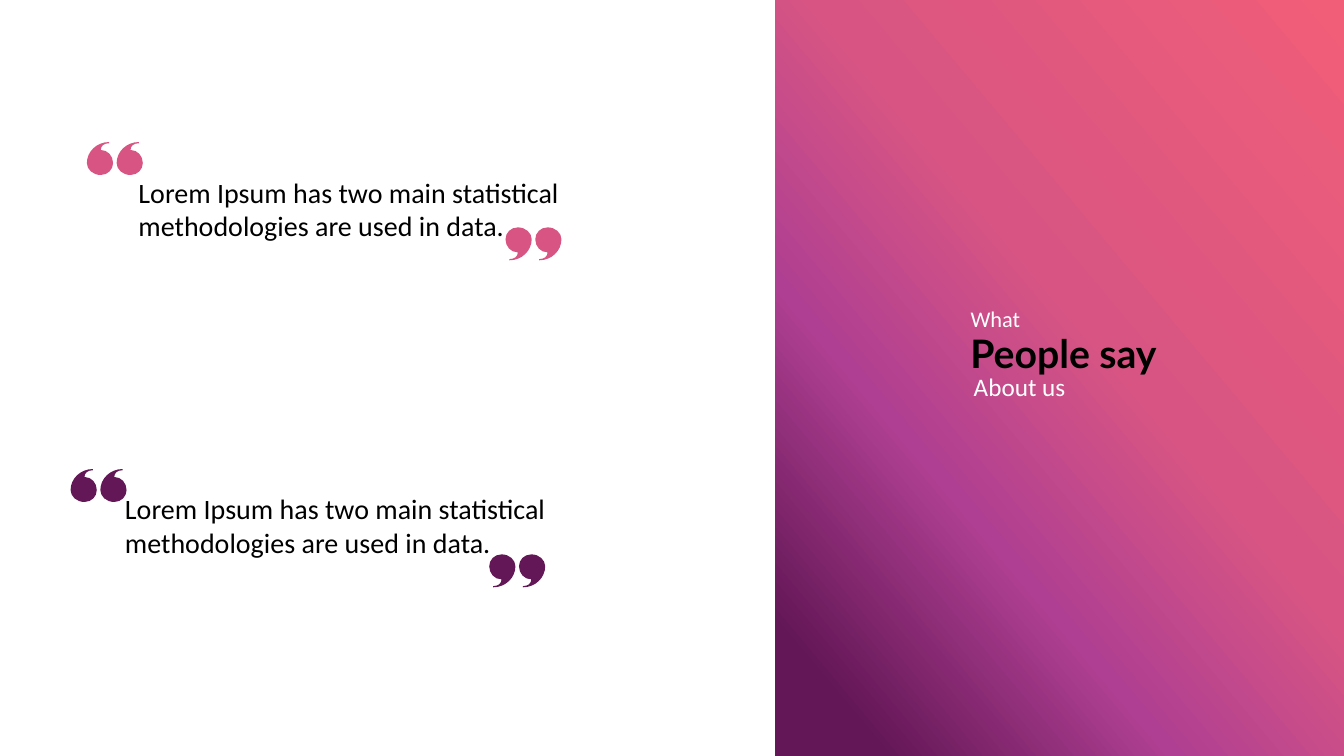
from lxml import etree
from pptx import Presentation
from pptx.dml.color import RGBColor
from pptx.enum import shapes, text
from pptx.oxml import ns
from pptx.util import Cm, Pt

PINK = RGBColor(0xD8, 0x55, 0x83)
PLUM = RGBColor(0x63, 0x17, 0x56)
CORAL = RGBColor(0xF1, 0x5E, 0x78)
VIOLET = RGBColor(0xAF, 0x3F, 0x92)
BLACK = RGBColor(0, 0, 0)
WHITE = RGBColor(0xFF, 0xFF, 0xFF)

PANEL_STOPS = [(0, CORAL), (44, PINK), (67, VIOLET), (91, PLUM)]
PANEL_ANGLE = 140
QUOTE = "Lorem Ipsum has two main statistical methodologies are used in data."

MARK_WIDTH, MARK_HEIGHT, MARK_PITCH = 0.66, 0.83, 0.75
CLOSING_OFFSET = (10.55, 2.15)
MARK_START = (0.35, 0.2)
MARK_CURVES = [
    [(0.35, 0.1), (0.43, 0.03), (0.56, 0.03)],
    [(0.56, 0)] * 3,
    [(0.25, 0), (0, 0.24), (0, 0.53)],
    [(0, 0.69), (0.15, 0.83), (0.35, 0.83)],
    [(0.53, 0.83), (0.66, 0.69), (0.66, 0.53)],
    [(0.66, 0.35), (0.53, 0.2), (0.35, 0.2)],
]


def write(shape, content, size=20, font="Calibri", color=BLACK, bold=False, wrap=True, insets=None):
    frame = shape.text_frame
    frame.text = content
    frame.word_wrap = wrap
    frame.auto_size = text.MSO_AUTO_SIZE.SHAPE_TO_FIT_TEXT
    frame.vertical_anchor = text.MSO_ANCHOR.TOP
    if insets:
        frame.margin_left = frame.margin_right = Cm(insets[0])
        frame.margin_top = frame.margin_bottom = Cm(insets[1])
    paragraph = frame.paragraphs[0]
    paragraph.alignment = text.PP_ALIGN.LEFT
    run_font = paragraph.runs[0].font
    run_font.size, run_font.name, run_font.bold = Pt(size), font, bold
    run_font.color.rgb = color


def add_text(slide, left, top, width, height, content, **style):
    box = slide.shapes.add_textbox(Cm(left), Cm(top), Cm(width), Cm(height))
    write(box, content, **style)


def add_panel(slide, left, width, height):
    panel = slide.shapes.add_shape(shapes.MSO_SHAPE.RECTANGLE, left, 0, width, height)
    panel.shadow.inherit = False
    panel.line.fill.background()
    panel.fill.gradient()
    panel.fill.gradient_angle = 360 - PANEL_ANGLE
    stops = panel.element.find(".//" + ns.qn("a:gsLst"))
    for stop in list(stops):
        stops.remove(stop)
    for position, color in PANEL_STOPS:
        stop = etree.SubElement(stops, ns.qn("a:gs"), pos=str(position * 1000))
        etree.SubElement(stop, ns.qn("a:srgbClr"), val=str(color))
    return panel


def bend_segments(shape):
    outline = shape.element.find(".//" + ns.qn("a:path"))
    segments = outline.findall(ns.qn("a:lnTo"))
    for first in range(0, len(segments), 3):
        curve = etree.Element(ns.qn("a:cubicBezTo"))
        segments[first].addprevious(curve)
        for segment in segments[first:first + 3]:
            curve.append(segment[0])
            outline.remove(segment)


def add_mark(group, left, top, color, closing=False):
    points = [MARK_START] + [point for curve in MARK_CURVES for point in curve]
    if closing:
        points = [(MARK_WIDTH - x, MARK_HEIGHT - y) for x, y in points]
    points = [(Cm(left + x), Cm(top + y)) for x, y in points]
    builder = group.shapes.build_freeform(*points[0])
    builder.add_line_segments(points[1:], close=True)
    mark = builder.convert_to_shape()
    bend_segments(mark)
    mark.shadow.inherit = False
    mark.fill.solid()
    mark.fill.fore_color.rgb = color
    mark.line.fill.background()


def add_quote(slide, mark_left, mark_top, text_left, text_top, color):
    group = slide.shapes.add_group_shape()
    across, down = CLOSING_OFFSET
    for left in (mark_left, mark_left + MARK_PITCH):
        add_mark(group, left, mark_top, color)
        add_mark(group, left + across, mark_top + down, color, closing=True)
    add_text(slide, text_left, text_top, 11.2, 2, QUOTE, insets=(0.3, 0.15))


def main():
    presentation = Presentation()
    presentation.slide_width, presentation.slide_height = Cm(33.87), Cm(19.05)
    slide = presentation.slides.add_slide(presentation.slide_layouts[5])

    panel_left = Cm(19.55)
    panel = add_panel(slide, panel_left, presentation.slide_width - panel_left, presentation.slide_height)

    title = slide.shapes.title
    title.left, title.top, title.width, title.height = Cm(24.2), Cm(8.17), Cm(9.6), Cm(1.45)
    write(title, "People say", size=28, font="Lato", bold=True)
    title.element.addprevious(panel.element)

    add_text(slide, 24.21, 7.57, 1.78, 0.94, "What", size=16, color=WHITE, wrap=False)
    add_text(slide, 24.29, 9.22, 2.84, 1.02, "About us", size=18, color=WHITE, wrap=False)

    add_quote(slide, 2.19, 3.58, 3.19, 4.27, PINK)
    add_quote(slide, 1.78, 11.82, 2.85, 12.24, PLUM)
    presentation.save("out.pptx")


if __name__ == "__main__":
    main()
